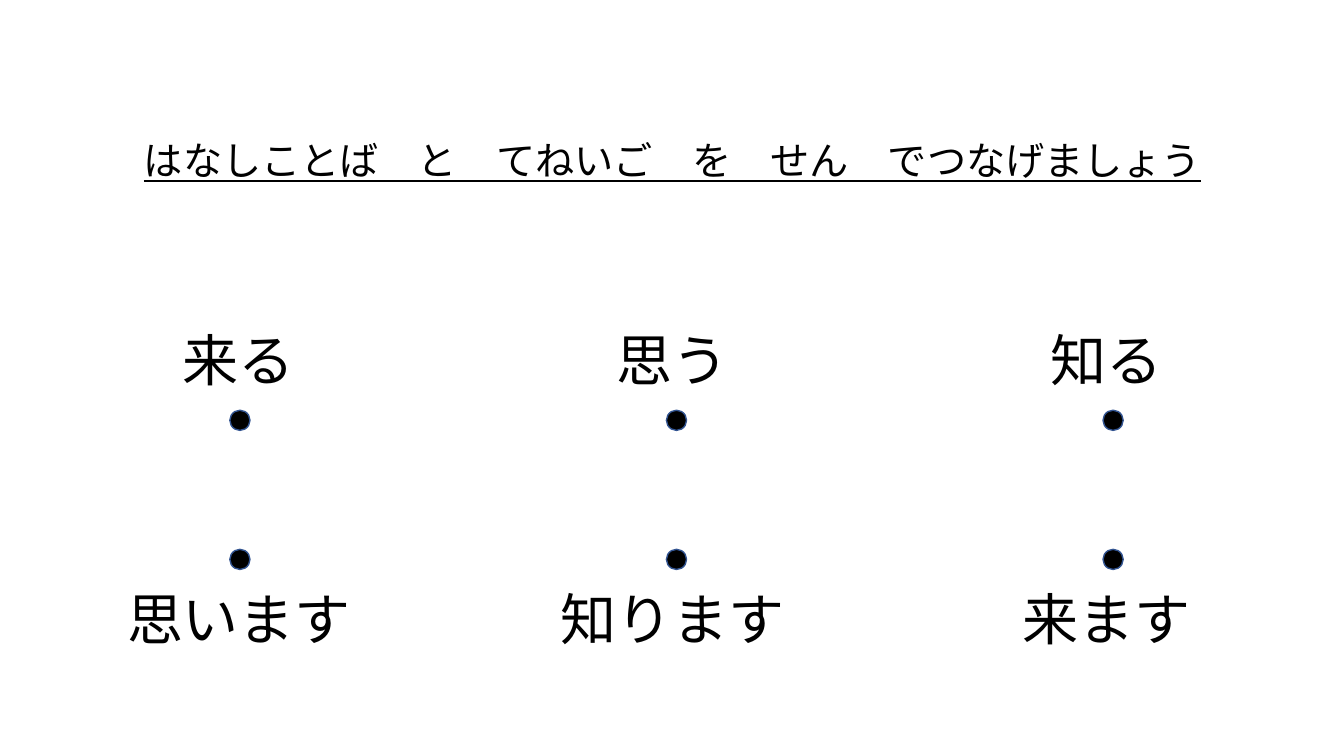
"""Build a worksheet slide that matches plain verbs with their polite forms."""
from dataclasses import dataclass

from lxml import etree
from pptx import Presentation
from pptx import util as u
from pptx.dml.color import RGBColor
from pptx.enum import shapes, text
from pptx.oxml import ns
from pptx.slide import Slide
from pptx.text.text import TextFrame


@dataclass(frozen=True)
class Theme:
    font: str = "Noto Sans CJK JP"
    ink: RGBColor = RGBColor(0x00, 0x00, 0x00)
    dot_outline: RGBColor = RGBColor(0x32, 0x54, 0x91)
    title_size: int = 28
    word_size: int = 40


@dataclass(frozen=True)
class WordRow:
    words: tuple[str, ...]
    word_top: float
    dot_top: float


THEME = Theme()
TITLE = "はなしことば　と　てねいご　を　せん　でつなげましょう"
ROWS = (
    WordRow(("来る", "思う", "知る"), word_top=3.18, dot_top=4.07),
    WordRow(("思います", "知ります", "来ます"), word_top=5.75, dot_top=5.45),
)
WORD_LEFT, WORD_PITCH = 0.9, 4.3
WORD_WIDTH, WORD_HEIGHT = 2.94, 0.77
DOT_LEFT, DOT_PITCH, DOT_SIZE = 2.28, 4.33, 0.2


def write_text(frame: TextFrame, content: str, *, size: int, underline: bool = False,
               line_spacing: float = 1.0, space_before: int = 0,
               auto_size: text.MSO_AUTO_SIZE = text.MSO_AUTO_SIZE.NONE) -> None:
    frame.word_wrap = True
    frame.auto_size = auto_size
    frame.vertical_anchor = text.MSO_ANCHOR.TOP
    paragraph = frame.paragraphs[0]
    paragraph.alignment = text.PP_ALIGN.CENTER
    paragraph.line_spacing = line_spacing
    paragraph.space_before = u.Pt(space_before)
    run = paragraph.add_run()
    run.text = content
    run.font.size = u.Pt(size)
    run.font.underline = underline
    run.font.color.rgb = THEME.ink
    run.font.name = THEME.font
    east_asian = etree.SubElement(run.font._element, ns.qn("a:ea"))
    east_asian.set("typeface", THEME.font)


def add_title(slide: Slide) -> None:
    title = slide.shapes.title
    title.left, title.top = u.Inches(1.05), u.Inches(1.35)
    title.width, title.height = u.Inches(11.24), u.Inches(1)
    write_text(title.text_frame, TITLE, size=THEME.title_size, underline=True,
               line_spacing=0.9, space_before=10)


def add_word(slide: Slide, word: str, left: float, top: float) -> None:
    box = slide.shapes.add_textbox(u.Inches(left), u.Inches(top),
                                   u.Inches(WORD_WIDTH), u.Inches(WORD_HEIGHT))
    write_text(box.text_frame, word, size=THEME.word_size,
               auto_size=text.MSO_AUTO_SIZE.SHAPE_TO_FIT_TEXT)


def add_dot(slide: Slide, left: float, top: float) -> None:
    dot = slide.shapes.add_shape(shapes.MSO_SHAPE.FLOWCHART_CONNECTOR,
                                 u.Inches(left), u.Inches(top),
                                 u.Inches(DOT_SIZE), u.Inches(DOT_SIZE))
    dot.shadow.inherit = False
    dot.fill.solid()
    dot.fill.fore_color.rgb = THEME.ink
    dot.line.color.rgb = THEME.dot_outline
    dot.line.width = u.Pt(1)


def main() -> None:
    presentation = Presentation()
    presentation.slide_width = u.Inches(13.33)
    presentation.slide_height = u.Inches(7.5)
    title_only = presentation.slide_layouts.get_by_name("Title Only")
    slide = presentation.slides.add_slide(title_only)
    add_title(slide)
    for row in ROWS:
        for column, word in enumerate(row.words):
            add_word(slide, word, WORD_LEFT + column * WORD_PITCH, row.word_top)
            add_dot(slide, DOT_LEFT + column * DOT_PITCH, row.dot_top)
    presentation.save("out.pptx")


if __name__ == "__main__":
    main()
